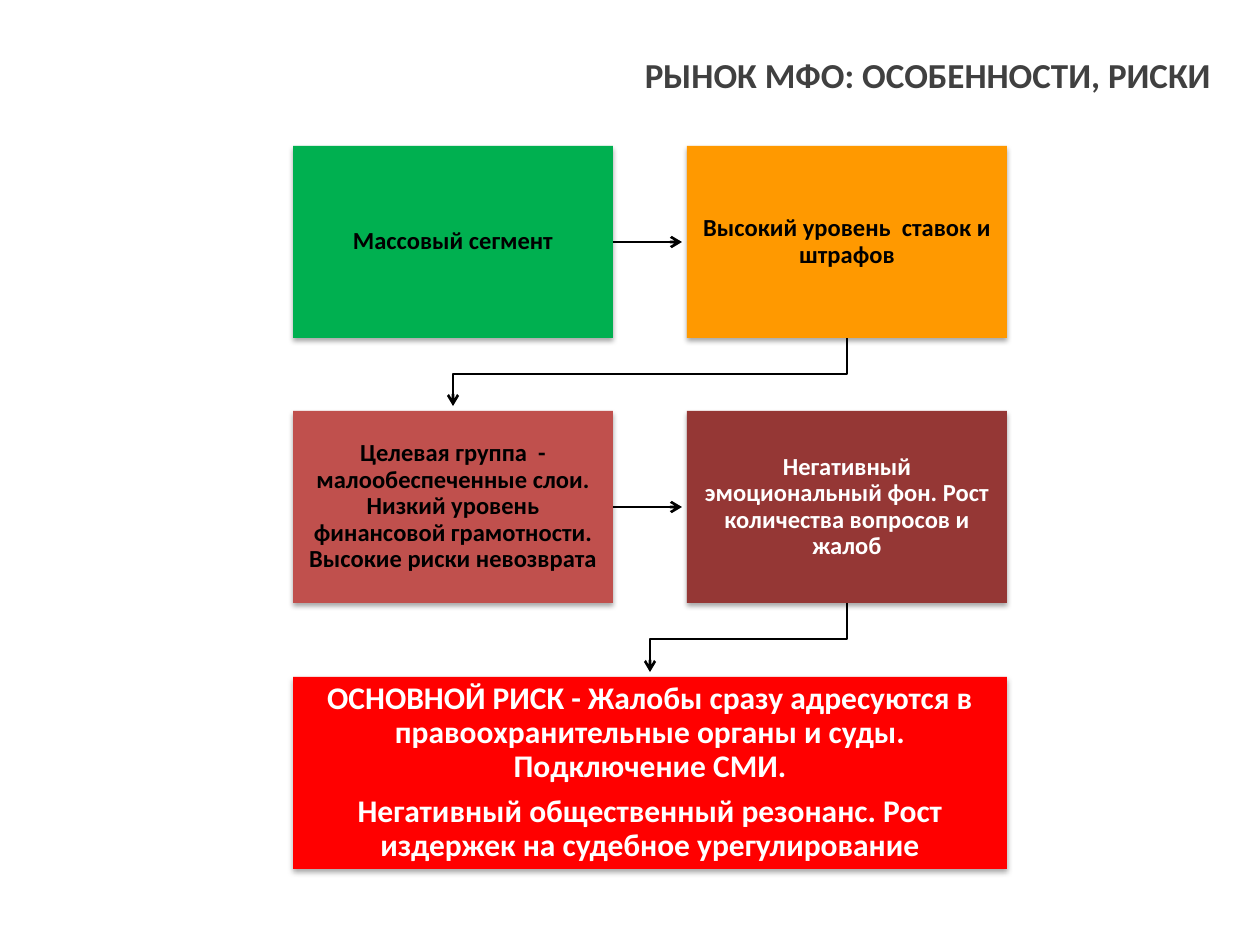
from lxml import etree
from pptx import Presentation
from pptx.dml.color import RGBColor
from pptx.enum.shapes import MSO_CONNECTOR, MSO_SHAPE
from pptx.enum.text import MSO_ANCHOR, PP_ALIGN
from pptx.oxml.ns import qn
from pptx.util import Emu, Pt

RECTANGLE = MSO_SHAPE.RECTANGLE
STRAIGHT = MSO_CONNECTOR.STRAIGHT
MIDDLE = MSO_ANCHOR.MIDDLE
CENTER, RIGHT = PP_ALIGN.CENTER, PP_ALIGN.RIGHT

FONT = "Calibri"
EMU_PER_PX = 914400 / 126
BLACK, WHITE = "000000", "FFFFFF"
COLUMNS = (293, 687)
ROWS = (146, 411, 677)
BOX_WIDTH, BOX_HEIGHT = 320, 192
FULL_WIDTH = COLUMNS[1] + BOX_WIDTH - COLUMNS[0]
ARROW_GAP, BEND_DROP = 5, 36
RIGHT_SIDE = 3

STEPS = (
    (0, 0, "00B050", BLACK, "Массовый сегмент"),
    (1, 0, "FF9900", BLACK, "Высокий уровень  ставок и штрафов"),
    (0, 1, "C0504D", BLACK,
     "Целевая группа  - малообеспеченные слои. Низкий уровень финансовой "
     "грамотности. Высокие риски невозврата"),
    (1, 1, "953735", WHITE,
     "Негативный эмоциональный фон. Рост количества вопросов и жалоб"),
)
MAIN_RISK = (
    "ОСНОВНОЙ РИСК - Жалобы сразу адресуются в правоохранительные органы и "
    "суды. Подключение СМИ.",
    "Негативный общественный резонанс. Рост издержек на судебное урегулирование",
)


def px(length):
    """Turn pixels into EMU."""
    return Emu(round(length * EMU_PER_PX))


def color(value):
    """Turn a hex string into a colour."""
    return RGBColor.from_string(value)


def add_span(para, text, size, ink):
    """Add one bold run to a paragraph."""
    span = para.add_run()
    span.text = text
    span.font.name = FONT
    span.font.size = Pt(size)
    span.font.bold = True
    span.font.color.rgb = color(ink)


def add_title(page, text):
    """Place and fill the title placeholder."""
    title = page.shapes.title
    title.left, title.top = px(302), px(-4)
    title.width, title.height = px(922), px(158)
    title.text_frame.vertical_anchor = MIDDLE
    para = title.text_frame.paragraphs[0]
    para.alignment = RIGHT
    add_span(para, text, 20, "404040")


def set_shadow(box):
    """Give a box a soft shadow below it."""
    box.shadow.inherit = False
    effects = box._element.spPr.find(qn("a:effectLst"))
    shadow = etree.SubElement(effects, qn("a:outerShdw"), blurRad="40000",
                              dist="23000", dir="5400000", rotWithShape="0")
    ink = etree.SubElement(shadow, qn("a:srgbClr"), val=BLACK)
    etree.SubElement(ink, qn("a:alpha"), val="35000")


def add_box(page, left, top, width, fill, ink, texts, size, inset):
    """Add a filled box with centred paragraphs."""
    box = page.shapes.add_shape(RECTANGLE, px(left), px(top), px(width), px(BOX_HEIGHT))
    set_shadow(box)
    box.fill.solid()
    box.fill.fore_color.rgb = color(fill)
    box.line.fill.background()
    frame = box.text_frame
    frame.word_wrap = True
    frame.vertical_anchor = MIDDLE
    frame.margin_left = frame.margin_right = px(inset)
    frame.margin_top = frame.margin_bottom = px(inset)
    for index, text in enumerate(texts):
        para = frame.add_paragraph() if index else frame.paragraphs[0]
        para.alignment = CENTER
        para.line_spacing = 0.9
        para.space_after = Pt(round(size * 0.35))
        add_span(para, text, size, ink)
    return box


def style_arrow(arrow):
    """Draw a thin black line with an open arrowhead at its end."""
    arrow.line.color.rgb = color(BLACK)
    arrow.line.width = Pt(1.5)
    etree.SubElement(arrow.line._get_or_add_ln(), qn("a:tailEnd"), type="arrow")


def add_straight_arrow(page, box, row):
    """Link a left box to the box on its right."""
    middle = px(ROWS[row] + BOX_HEIGHT / 2)
    arrow = page.shapes.add_connector(
        STRAIGHT, px(COLUMNS[0] + BOX_WIDTH), middle,
        px(COLUMNS[1] - ARROW_GAP), middle)
    arrow.begin_connect(box, RIGHT_SIDE)
    style_arrow(arrow)
    etree.SubElement(arrow._element.spPr, qn("a:effectLst"))


def add_bent_arrow(page, row, end_x):
    """Link a right box to the row below it."""
    start_x = COLUMNS[1] + BOX_WIDTH / 2
    start_y = ROWS[row] + BOX_HEIGHT
    bend_y = start_y + BEND_DROP
    end_y = ROWS[row + 1] - ARROW_GAP
    builder = page.shapes.build_freeform(px(start_x), px(start_y))
    points = ((start_x, bend_y), (end_x, bend_y), (end_x, end_y))
    builder.add_line_segments([(px(x), px(y)) for x, y in points], close=False)
    arrow = builder.convert_to_shape()
    arrow.shadow.inherit = False
    arrow.fill.background()
    style_arrow(arrow)


def main():
    """Build and save the slide."""
    deck = Presentation()
    deck.slide_width, deck.slide_height = px(1260), px(945)
    page = deck.slides.add_slide(deck.slide_layouts[5])
    add_title(page, "РЫНОК МФО: ОСОБЕННОСТИ, РИСКИ")
    for column, row, fill, ink, text in STEPS:
        box = add_box(page, COLUMNS[column], ROWS[row], BOX_WIDTH, fill, ink,
                      [text], 14, 14)
        if column == 0:
            add_straight_arrow(page, box, row)
    add_box(page, COLUMNS[0], ROWS[2], FULL_WIDTH, "FF0000", WHITE, MAIN_RISK, 18, 18)
    add_bent_arrow(page, 0, COLUMNS[0] + BOX_WIDTH / 2)
    add_bent_arrow(page, 1, COLUMNS[0] + FULL_WIDTH / 2)
    deck.save("out.pptx")


if __name__ == "__main__":
    main()
